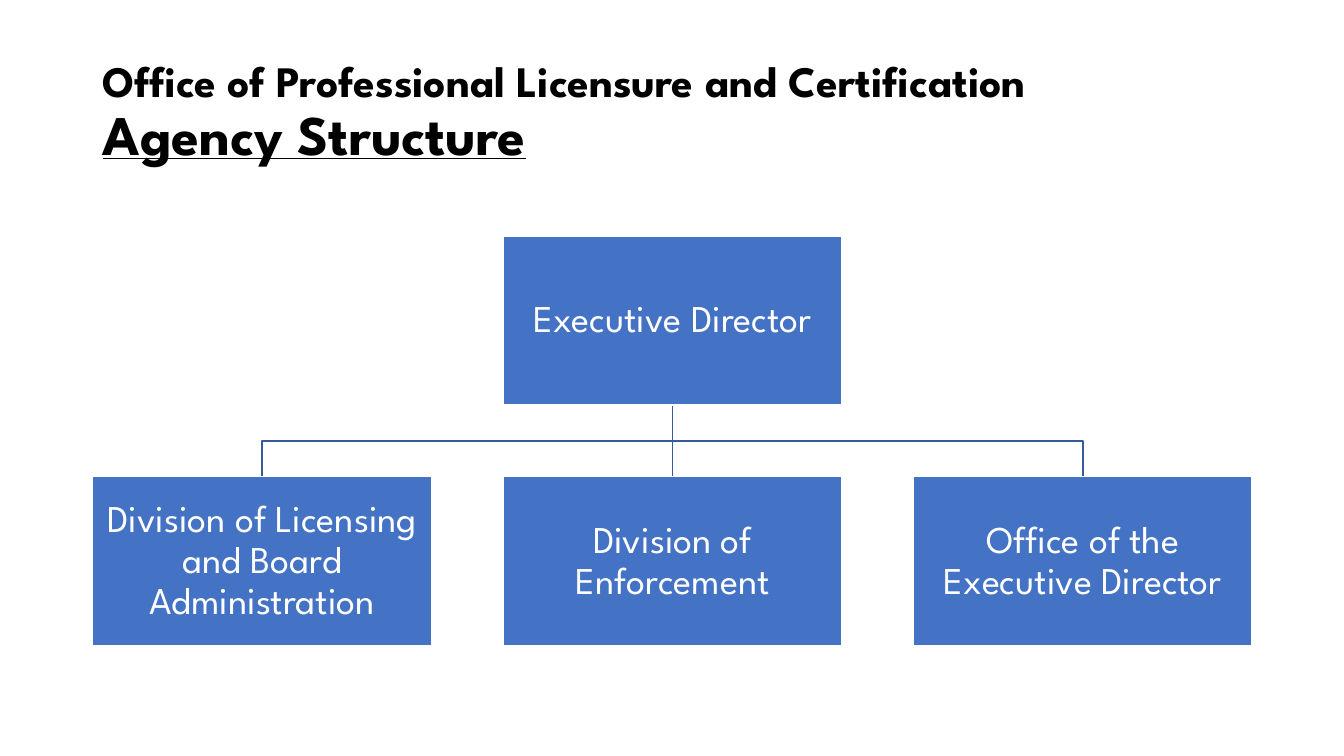
from lxml import etree
from pptx import Presentation
from pptx.dml.color import RGBColor
from pptx.enum import shapes, text
from pptx.oxml import ns
from pptx.util import Inches, Pt

HUES = {"box": "4472C4", "line": "365B9D", "white": "FFFFFF", "black": "000000"}
FONT = "League Spartan"
WIDE, HIGH = 3.36, 1.68
LEFT, STEP = 0.92, 4.07
TOP, LOW = 2.34, 4.73
UNITS = [
    "Division of Licensing and Board Administration",
    "Division of Enforcement",
    "Office of the Executive Director",
]


def hue(name):
    return RGBColor.from_string(HUES[name])


def write(para, words, size, color, bold=False, under=False):
    run = para.add_run()
    run.text = words
    font = run.font
    font.name, font.size = FONT, Pt(size)
    font.bold, font.underline = bold, under
    font.color.rgb = hue(color)


def setup(frame, align):
    frame.word_wrap = True
    frame.vertical_anchor = text.MSO_ANCHOR.MIDDLE
    para = frame.paragraphs[0]
    para.alignment = align
    para.line_spacing = 0.9
    return para


def stroke(line, color):
    line.color.rgb = hue(color)
    line.width = Pt(1)


def title(slide):
    box = slide.shapes.add_textbox(
        Inches(LEFT), Inches(0.4), Inches(11.5), Inches(1.45))
    para = setup(box.text_frame, text.PP_ALIGN.LEFT)
    write(para, "Office of Professional Licensure and Certification",
          size=31, color="black", bold=True)
    para.add_line_break()
    write(para, "Agency Structure", size=40, color="black", bold=True, under=True)


def node(slide, words, col, top):
    box = slide.shapes.add_shape(
        shapes.MSO_SHAPE.RECTANGLE, Inches(LEFT + col * STEP), Inches(top),
        Inches(WIDE), Inches(HIGH))
    box.shadow.inherit = False
    box.fill.solid()
    box.fill.fore_color.rgb = hue("box")
    stroke(box.line, "white")
    frame = box.text_frame
    frame.margin_left = frame.margin_right = Inches(0.02)
    frame.margin_top = frame.margin_bottom = Inches(0.02)
    write(setup(frame, text.PP_ALIGN.CENTER), words, size=27, color="white")
    return box


def center(col):
    return Inches(LEFT + col * STEP + WIDE / 2)


def elbow(slide, col):
    start, end = Inches(TOP + HIGH), Inches(LOW)
    mid = (start + end) // 2
    form = slide.shapes.build_freeform(center(1), start)
    form.add_line_segments(
        [(center(1), mid), (center(col), mid), (center(col), end)], close=False)
    bend = form.convert_to_shape()
    bend.shadow.inherit = False
    bend.fill.background()
    stroke(bend.line, "line")


def stem(slide):
    link = slide.shapes.add_connector(
        shapes.MSO_CONNECTOR.STRAIGHT, center(1), Inches(TOP + HIGH),
        center(1), Inches(LOW))
    stroke(link.line, "line")
    etree.SubElement(link._element.spPr, ns.qn("a:effectLst"))
    return link


def main():
    deck = Presentation()
    deck.slide_width, deck.slide_height = Inches(13.33), Inches(7.5)
    slide = deck.slides.add_slide(deck.slide_layouts[6])
    title(slide)
    elbow(slide, 2)
    link = stem(slide)
    elbow(slide, 0)
    head = node(slide, "Executive Director", 1, TOP)
    row = [node(slide, words, col, LOW) for col, words in enumerate(UNITS)]
    link.begin_connect(head, 2)
    link.end_connect(row[1], 0)
    deck.save("out.pptx")


if __name__ == "__main__":
    main()
